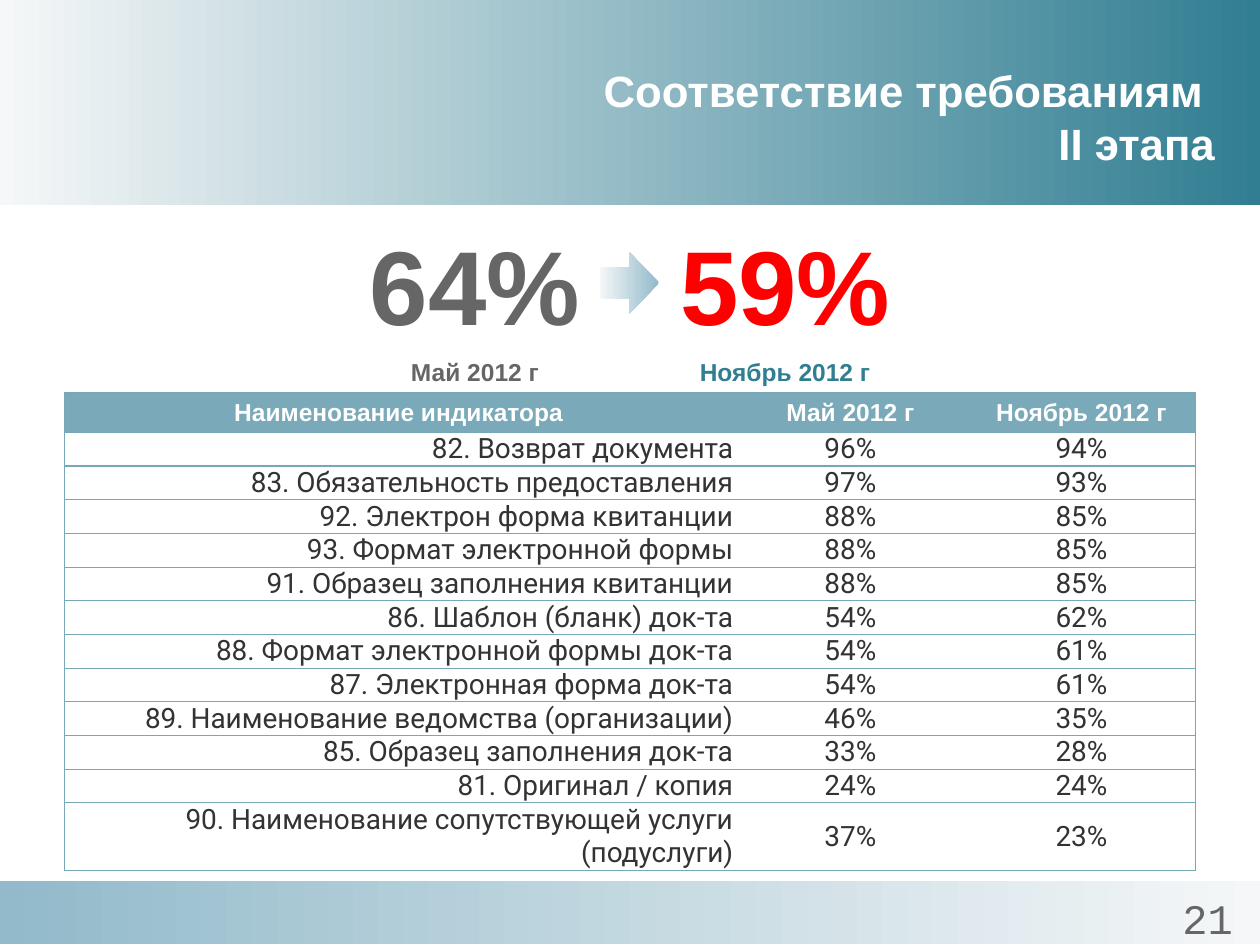
from lxml.etree import SubElement as Sub
from pptx import Presentation
from pptx.dml.color import RGBColor as Rgb
from pptx.enum.shapes import MSO_SHAPE as Shape
from pptx.enum.text import MSO_ANCHOR as Anchor, MSO_AUTO_SIZE as Auto, PP_ALIGN as Align
from pptx.oxml.ns import qn
from pptx.util import Pt

HUES = {
    "pale": "F5F7F8", "teal": "317E92", "sky": "92BACA", "head": "7AAAB9",
    "rule": "76A8B7", "gray": "666666", "ink": "333333", "red": "FF0000",
    "white": "FFFFFF",
}
HEAD = ("Наименование индикатора", "Май 2012 г", "Ноябрь 2012 г")
ROWS = [
    ("82. Возврат документа", 96, 94),
    ("83. Обязательность предоставления", 97, 93),
    ("92. Электрон форма квитанции", 88, 85),
    ("93. Формат электронной формы", 88, 85),
    ("91. Образец заполнения квитанции", 88, 85),
    ("86. Шаблон (бланк) док-та", 54, 62),
    ("88. Формат электронной формы док-та", 54, 61),
    ("87. Электронная форма док-та", 54, 61),
    ("89. Наименование ведомства (организации)", 46, 35),
    ("85. Образец заполнения док-та", 33, 28),
    ("81. Оригинал / копия", 24, 24),
    ("90. Наименование сопутствующей услуги (подуслуги)", 37, 23),
]


def hue(name):
    """Return the named colour."""
    return Rgb.from_string(HUES[name])


def write(par, text, size, color, face="Arial", bold=True, align=Align.CENTER):
    """Add one formatted run to a paragraph."""
    par.alignment = align
    run = par.add_run()
    run.text = text
    font = run.font
    font.name, font.size, font.bold = face, Pt(size), bold
    font.color.rgb = hue(color)


def add_fade(slide, kind, box, end, angle=0):
    """Add a borderless shape that fades from pale to the end colour."""
    shape = slide.shapes.add_shape(kind, *map(Pt, box))
    shape.shadow.inherit = False
    shape.line.fill.background()
    shape.fill.gradient()
    shape.fill.gradient_angle = angle
    for stop, name, place in zip(shape.fill.gradient_stops, ("pale", end), (0, 1)):
        stop.color.rgb = hue(name)
        stop.position = place


def add_box(slide, box, top):
    """Add a wrapping text box with the given top inset."""
    frame = slide.shapes.add_textbox(*map(Pt, box)).text_frame
    frame.word_wrap = True
    frame.margin_top = Pt(top)
    return frame


def add_score(slide, left, score, date, tints):
    """Add a large score above its date."""
    frame = add_box(slide, (left, 116.6, 197.3, 90.7), 9.6)
    for text, size, tint in zip((score, date), (60, 14), tints):
        par = frame.paragraphs[0] if text == score else frame.add_paragraph()
        par.space_after = Pt(6)
        write(par, text, size, tint)


def set_title(slide):
    """Place and fill the title above the bands."""
    title = slide.shapes.title
    title.left, title.top, title.width, title.height = map(Pt, (274.3, 21.6, 427, 90))
    title.element.getparent().append(title.element)
    frame = title.text_frame
    frame.auto_size, frame.word_wrap = Auto.NONE, True
    frame.vertical_anchor = Anchor.MIDDLE
    write(frame.paragraphs[0], "Соответствие требованиям ", 25, "white", align=Align.RIGHT)
    write(frame.add_paragraph(), "II этапа", 25, "white", align=Align.RIGHT)


def rule_cell(cell, sides):
    """Draw rules on the given sides and clear the others."""
    props = cell._tc.get_or_add_tcPr()
    for side in "LRTB":
        line = Sub(props, qn(f"a:ln{side}"), w=str(Pt(0.75)))
        if side in sides:
            fill = Sub(line, qn("a:solidFill"))
            Sub(fill, qn("a:srgbClr"), val=HUES["rule"])
        else:
            Sub(line, qn("a:noFill"))


def fill_cell(cell, text, row, col):
    """Format and fill one table cell."""
    rule_cell(cell, "TB" + ("L", "", "R")[col])
    side = Pt(0 if row else 5.8)
    cell.margin_left = cell.margin_right = side
    cell.margin_top = cell.margin_bottom = 0
    cell.vertical_anchor = Anchor.MIDDLE
    par = cell.text_frame.paragraphs[0]
    if row:
        cell.fill.background()
        align = Align.CENTER if col else Align.RIGHT
        write(par, text, 16, "ink", "Roboto", False, align)
    else:
        cell.fill.solid()
        cell.fill.fore_color.rgb = hue("head")
        write(par, text, 14, "white")


def add_grid(slide):
    """Add the table of indicators."""
    data = [HEAD] + [(name, f"{may}%", f"{nov}%") for name, may, nov in ROWS]
    highs = [22.5] + [19.25] * (len(ROWS) - 1) + [38.5]
    box = (36.7, 224.6, 646.4, sum(highs))
    table = slide.shapes.add_table(len(data), len(HEAD), *map(Pt, box)).table
    for col, wide in zip(table.columns, (382.3, 133.9, 130.2)):
        col.width = Pt(wide)
    for row, (high, texts) in enumerate(zip(highs, data)):
        table.rows[row].height = Pt(high)
        for col, text in enumerate(texts):
            fill_cell(table.cell(row, col), text, row, col)


def main():
    """Build and save the slide."""
    deck = Presentation()
    deck.slide_width, deck.slide_height = Pt(720), Pt(540)
    slide = deck.slides.add_slide(deck.slide_layouts[5])
    add_fade(slide, Shape.RECTANGLE, (0, 0, 720, 117.2), "teal")
    add_fade(slide, Shape.RECTANGLE, (0, 503.5, 720, 36), "sky", 180)
    add_score(slide, 172.8, "64%", HEAD[1], ("gray", "gray"))
    add_score(slide, 350, "59%", HEAD[2], ("red", "teal"))
    add_fade(slide, Shape.RIGHT_ARROW, (342.7, 144, 33.8, 35.3), "sky")
    set_title(slide)
    page = add_box(slide, (660.2, 502.6, 59.8, 37.4), 7.2)
    write(page.paragraphs[0], "21", 24, "gray", "Courier New", False)
    add_grid(slide)
    deck.save("out.pptx")


if __name__ == "__main__":
    main()
